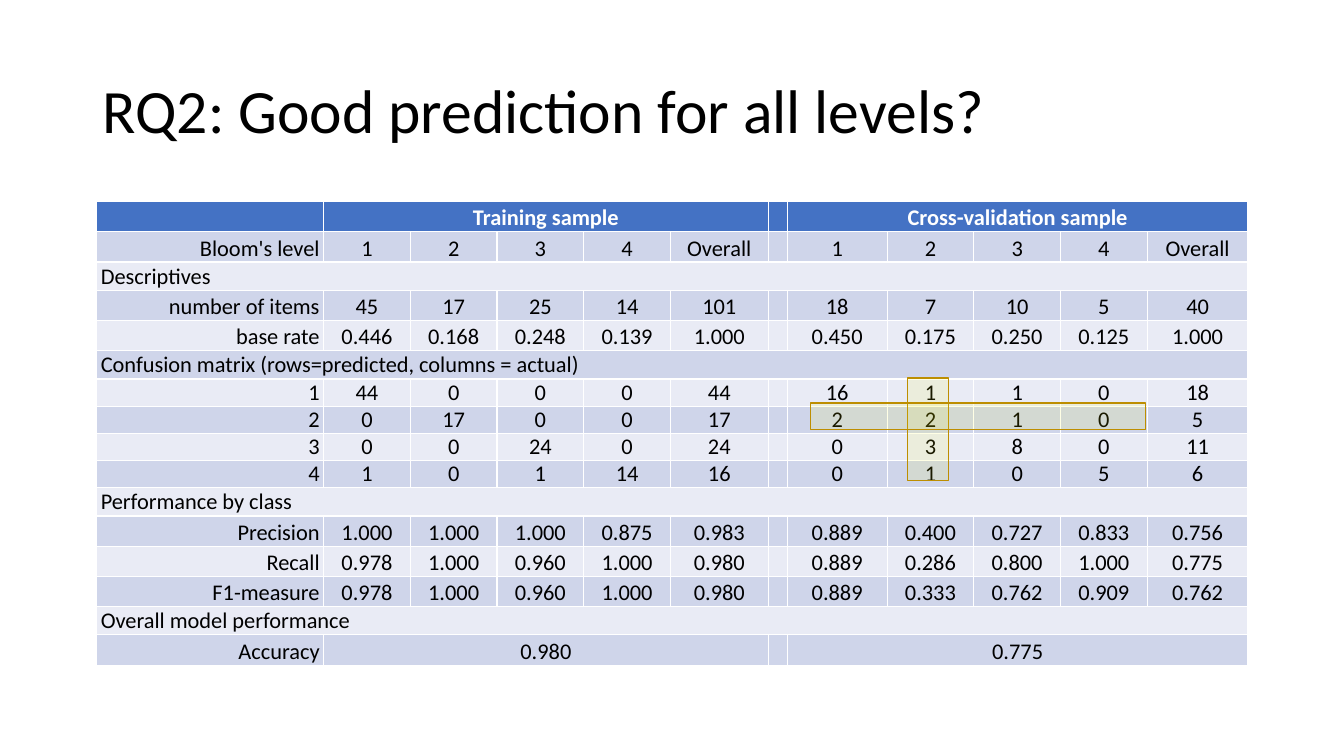
from lxml import etree
from pptx import Presentation
from pptx.dml.color import RGBColor
from pptx.enum.shapes import MSO_SHAPE
from pptx.enum.text import MSO_ANCHOR, PP_ALIGN
from pptx.oxml.ns import qn
from pptx.util import Inches, Pt

RECTANGLE = MSO_SHAPE.RECTANGLE
MIDDLE, BOTTOM = MSO_ANCHOR.MIDDLE, MSO_ANCHOR.BOTTOM
LEFT, CENTER, RIGHT = PP_ALIGN.LEFT, PP_ALIGN.CENTER, PP_ALIGN.RIGHT

FONT = "Calibri"
COLORS = {
    "text": "000000",
    "header": "4472C4",
    "header_text": "FFFFFF",
    "dark_band": "CFD5EA",
    "light_band": "E9EBF5",
    "marker": "FFFF00",
    "marker_line": "BD8E00",
}

COLUMN_WIDTHS = [2.25, 0.86, 0.86, 0.86, 0.86, 0.97, 0.19, 0.99, 0.86, 0.86, 0.86, 1]
LEVELS = ["1", "2", "3", "4", "Overall"]
TRAINING_COLUMN, VALIDATION_COLUMN = 1, 7
VALUE_HEIGHT, SECTION_HEIGHT, MATRIX_HEIGHT = 0.3, 0.28, 0.27

ROWS = [
    ("", ["Training sample"], ["Cross-validation sample"]),
    ("Bloom's level", LEVELS, LEVELS),
    ("Descriptives",),
    ("number of items", ["45", "17", "25", "14", "101"], ["18", "7", "10", "5", "40"]),
    ("base rate", ["0.446", "0.168", "0.248", "0.139", "1.000"],
     ["0.450", "0.175", "0.250", "0.125", "1.000"]),
    ("Confusion matrix (rows=predicted, columns = actual)",),
    ("1", ["44", "0", "0", "0", "44"], ["16", "1", "1", "0", "18"]),
    ("2", ["0", "17", "0", "0", "17"], ["2", "2", "1", "0", "5"]),
    ("3", ["0", "0", "24", "0", "24"], ["0", "3", "8", "0", "11"]),
    ("4", ["1", "0", "1", "14", "16"], ["0", "1", "0", "5", "6"]),
    ("Performance by class",),
    ("Precision", ["1.000", "1.000", "1.000", "0.875", "0.983"],
     ["0.889", "0.400", "0.727", "0.833", "0.756"]),
    ("Recall", ["0.978", "1.000", "0.960", "1.000", "0.980"],
     ["0.889", "0.286", "0.800", "1.000", "0.775"]),
    ("F1-measure", ["0.978", "1.000", "0.960", "1.000", "0.980"],
     ["0.889", "0.333", "0.762", "0.909", "0.762"]),
    ("Overall model performance",),
    ("Accuracy", ["0.980"], ["0.775"]),
]


def rgb(name):
    return RGBColor.from_string(COLORS[name])


def add_span(para, text, size, color, bold=False):
    span = para.add_run()
    span.text = text
    span.font.name = FONT
    span.font.size = Pt(size)
    span.font.bold = bold
    span.font.color.rgb = rgb(color)


def add_title(page, left, top, width, height):
    box = page.shapes.add_textbox(Inches(left), Inches(top), Inches(width), Inches(height))
    frame = box.text_frame
    frame.word_wrap = True
    frame.vertical_anchor = MIDDLE
    para = frame.paragraphs[0]
    para.line_spacing = 0.9
    add_span(para, "RQ2: Good prediction for all levels?", 44, "text")


def prepare_cell(cell, fill):
    cell.margin_left = cell.margin_right = Inches(0.04)
    cell.margin_top = cell.margin_bottom = 0
    cell.vertical_anchor = BOTTOM
    cell.fill.solid()
    cell.fill.fore_color.rgb = rgb(fill)
    para = cell.text_frame.paragraphs[0]
    etree.SubElement(para._p, qn("a:endParaRPr"), sz="1600")


def write_cell(cell, text, align, header=False):
    if text:
        para = cell.text_frame.paragraphs[0]
        para.alignment = align
        add_span(para, text, 16, "header_text" if header else "text", header)


def row_height(row):
    if len(row) == 1:
        return SECTION_HEIGHT
    return MATRIX_HEIGHT if row[0].isdigit() else VALUE_HEIGHT


def add_results_table(page, left, top):
    heights = [row_height(row) for row in ROWS]
    frame = page.shapes.add_table(
        len(ROWS), len(COLUMN_WIDTHS), Inches(left), Inches(top),
        Inches(sum(COLUMN_WIDTHS)), Inches(sum(heights)))
    table = frame.table
    for column, width in zip(table.columns, COLUMN_WIDTHS):
        column.width = Inches(width)
    last_column = len(COLUMN_WIDTHS) - 1
    for index, (label, *samples) in enumerate(ROWS):
        table.rows[index].height = Inches(heights[index])
        header = index == 0
        fill = "header" if header else "dark_band" if index % 2 else "light_band"
        for column in range(last_column + 1):
            prepare_cell(table.cell(index, column), fill)
        label_cell = table.cell(index, 0)
        write_cell(label_cell, label, RIGHT if samples else LEFT)
        if not samples:
            label_cell.merge(table.cell(index, last_column))
        for start, values in zip((TRAINING_COLUMN, VALIDATION_COLUMN), samples):
            for offset, value in enumerate(values):
                write_cell(table.cell(index, start + offset), value, CENTER, header)
            if len(values) == 1:
                end = start + len(LEVELS) - 1
                table.cell(index, start).merge(table.cell(index, end))


def add_marker(group, left, top, width, height):
    marker = group.shapes.add_shape(
        RECTANGLE, Inches(left), Inches(top), Inches(width), Inches(height))
    marker.shadow.inherit = False
    marker.fill.solid()
    marker.fill.fore_color.rgb = rgb("marker")
    color = marker._element.spPr.find(qn("a:solidFill"))[0]
    etree.SubElement(color, qn("a:alpha"), val="10000")
    marker.line.color.rgb = rgb("marker_line")
    marker.line.width = Pt(1)


def add_level_two_markers(page, left, top):
    group = page.shapes.add_group_shape()
    add_marker(group, left + 0.96, top, 0.41, 1.02)
    add_marker(group, left, top + 0.25, 3.32, 0.26)


def main():
    deck = Presentation()
    deck.slide_width = Inches(13.33)
    deck.slide_height = Inches(7.5)
    page = deck.slides.add_slide(deck.slide_layouts[6])
    add_title(page, 0.92, 0.4, 11.5, 1.45)
    add_results_table(page, 0.96, 2)
    add_level_two_markers(page, 8.04, 3.75)
    deck.save("out.pptx")


if __name__ == "__main__":
    main()
